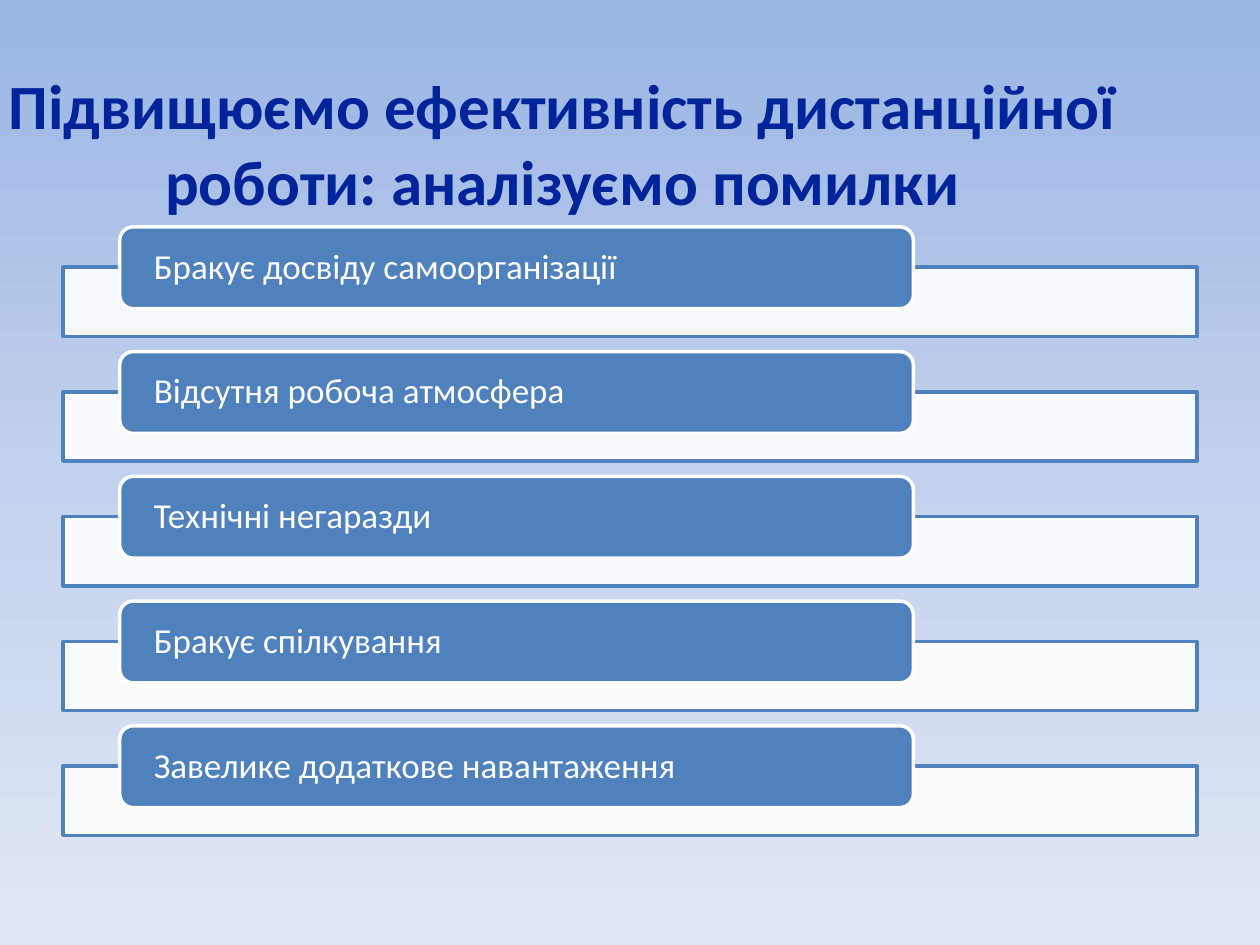
"""Build a slide listing common mistakes of remote work."""
from copy import deepcopy
from dataclasses import dataclass

from lxml.etree import SubElement
from pptx import Presentation
from pptx.dml.color import RGBColor
from pptx.enum.shapes import MSO_SHAPE
from pptx.enum.text import MSO_ANCHOR, PP_ALIGN
from pptx.oxml.ns import qn
from pptx.util import Inches, Pt


@dataclass(frozen=True)
class Theme:
    """Colours and type sizes of the slide."""
    font: str = "Calibri"
    title_size: int = 36
    label_size: int = 20
    outline: int = 2
    title: str = "00259A"
    accent: str = "4F81BD"
    white: str = "FFFFFF"
    panel_opacity: int = 90
    backdrop: tuple = ((0, "9AB5E4"), (0.5, "C2D1ED"), (1, "E1E8F5"))


THEME = Theme()
TITLE = "Підвищюємо ефективність дистанційної роботи: аналізуємо помилки"
MISTAKES = (
    "Бракує досвіду самоорганізації",
    "Відсутня робоча атмосфера",
    "Технічні негаразди",
    "Бракує спілкування",
    "Завелике додаткове навантаження",
)
FIRST_TOP = 1.8
ROW_STEP = 0.99


def paint_background(page):
    """Fill the page with a vertical three-stop gradient."""
    fill = page.background.fill
    fill.gradient()
    fill.gradient_angle = 270
    stop_list = page.element.find(".//" + qn("a:gsLst"))
    stop_list.append(deepcopy(stop_list[-1]))
    for stop, (position, color) in zip(fill.gradient_stops, THEME.backdrop):
        stop.position = position
        stop.color.rgb = RGBColor.from_string(color)


def write_text(shape, text, size, color, bold=False, align=PP_ALIGN.LEFT):
    """Put one vertically centred paragraph into a shape."""
    frame = shape.text_frame
    frame.word_wrap = True
    frame.vertical_anchor = MSO_ANCHOR.MIDDLE
    frame.text = text
    para = frame.paragraphs[0]
    para.alignment = align
    para.font.name = THEME.font
    para.font.size = Pt(size)
    para.font.bold = bold
    para.font.color.rgb = RGBColor.from_string(color)
    return frame


def add_block(page, kind, left, top, width, height, fill, line):
    """Add a flat outlined preset shape."""
    block = page.shapes.add_shape(
        kind, Inches(left), Inches(top), Inches(width), Inches(height))
    block.shadow.inherit = False
    block.fill.solid()
    block.fill.fore_color.rgb = RGBColor.from_string(fill)
    block.line.color.rgb = RGBColor.from_string(line)
    block.line.width = Pt(THEME.outline)
    return block


def add_mistake(page, text, top):
    """Add a translucent panel with a rounded label over its upper edge."""
    panel = add_block(page, MSO_SHAPE.RECTANGLE, 0.5, top + 0.32, 9, 0.55,
                      THEME.white, THEME.accent)
    color = panel.element.spPr.find(qn("a:solidFill"))[0]
    SubElement(color, qn("a:alpha"), val=str(THEME.panel_opacity * 1000))
    label = add_block(page, MSO_SHAPE.ROUNDED_RECTANGLE, 0.95, top, 6.3, 0.65,
                      THEME.accent, THEME.white)
    frame = write_text(label, text, THEME.label_size, THEME.white)
    frame.margin_left = frame.margin_right = Inches(0.24)
    frame.margin_top = frame.margin_bottom = 0
    frame.paragraphs[0].line_spacing = 0.9


def add_title(page):
    """Add the centred heading."""
    box = page.shapes.add_textbox(
        Inches(-0.12), Inches(0.36), Inches(9.17), Inches(1.54))
    write_text(box, TITLE, THEME.title_size, THEME.title, True, PP_ALIGN.CENTER)


def main():
    """Build and save the deck."""
    deck = Presentation()
    deck.slide_width, deck.slide_height = Inches(10), Inches(7.5)
    page = deck.slides.add_slide(deck.slide_layouts[6])
    paint_background(page)
    for row, text in enumerate(MISTAKES):
        add_mistake(page, text, FIRST_TOP + row * ROW_STEP)
    add_title(page)
    deck.save("out.pptx")


if __name__ == "__main__":
    main()
